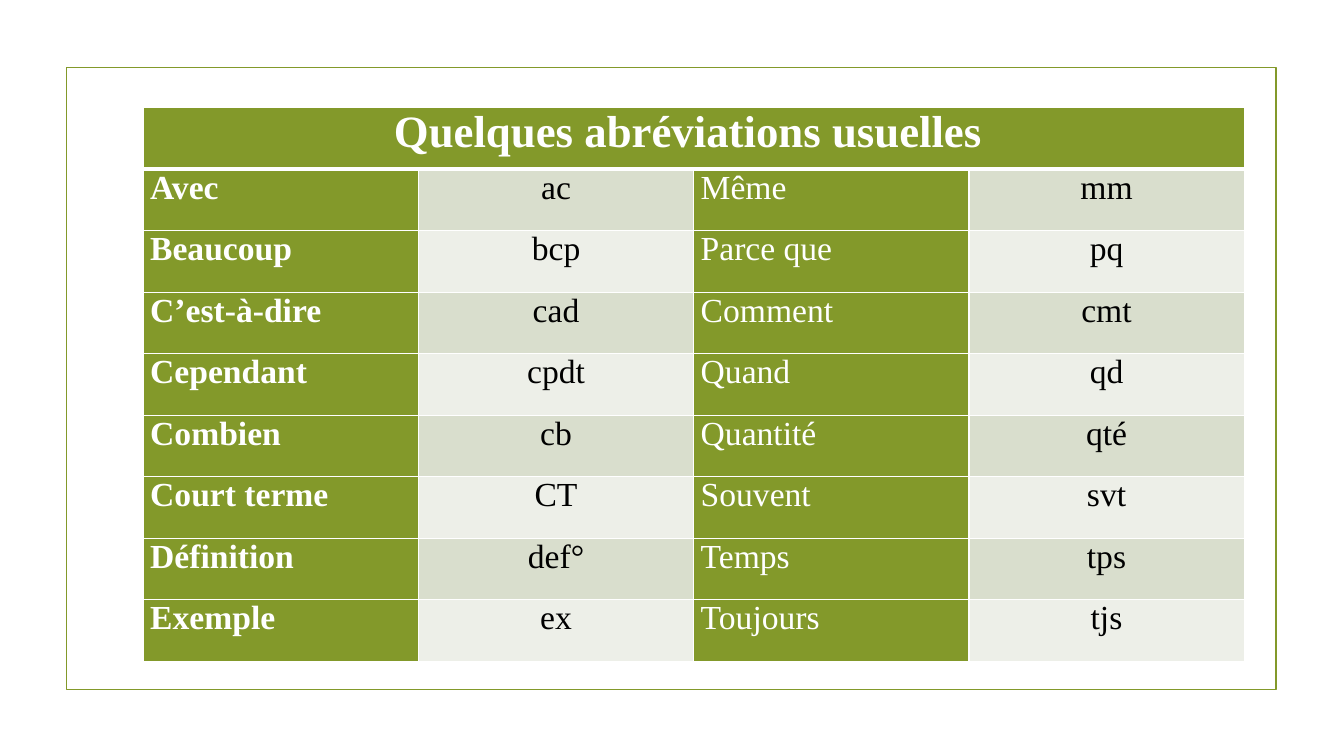
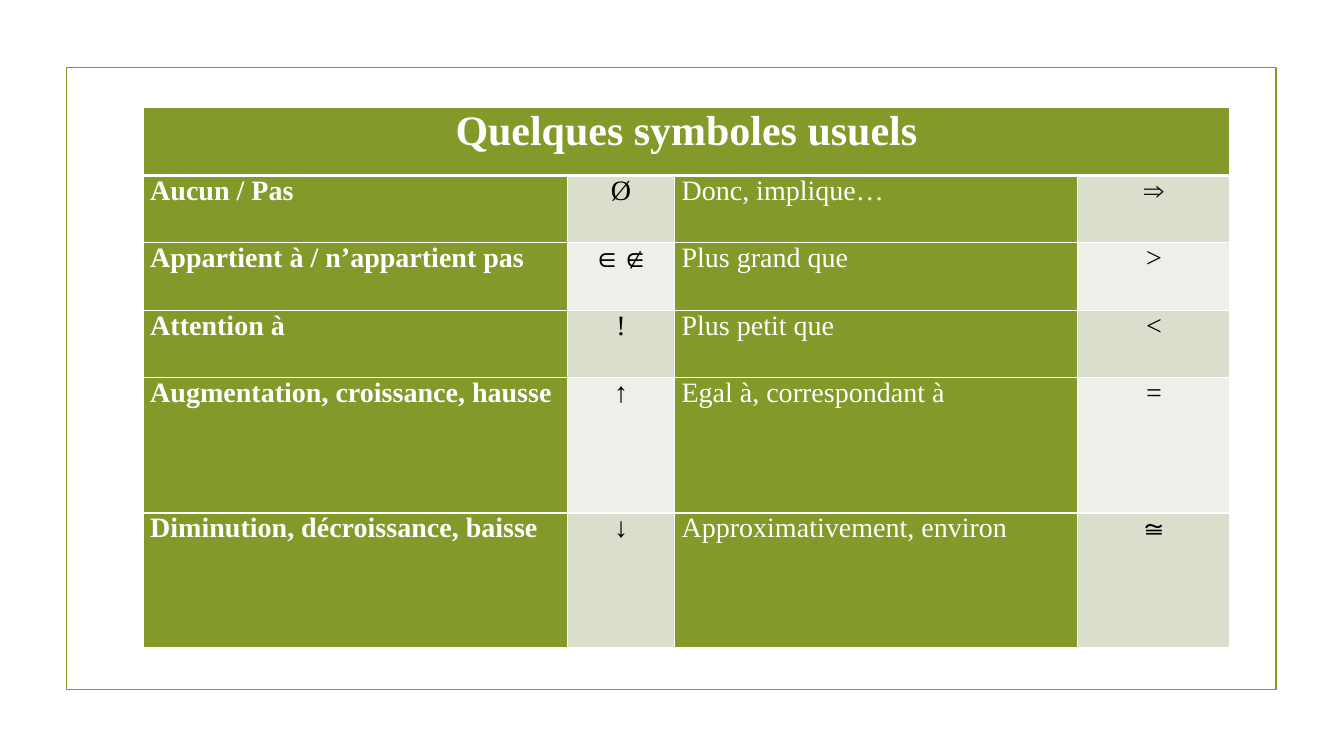
from lxml import etree
from pptx import Presentation
from pptx.dml.color import RGBColor
from pptx.enum.shapes import MSO_SHAPE
from pptx.enum.text import PP_ALIGN
from pptx.oxml.ns import qn
from pptx.util import Pt

RECT = MSO_SHAPE.RECTANGLE
CENTER = PP_ALIGN.CENTER
JUSTIFY = PP_ALIGN.JUSTIFY

SCALE = 9144
FONT = "Times New Roman"
GREEN = "83992A"
WHITE = "FFFFFF"
BLACK = "000000"
BANDS = ("EDEFE8", "D9DECD")
LEFT, TOP = 142, 107
THIN, THICK = 1, 3

INSETS = {
    "margin_left": 7 * SCALE,
    "margin_right": 7 * SCALE,
    "margin_top": 0,
    "margin_bottom": 0,
}
PLAIN = {"first_row": False, "horz_banding": False}

SHORT = [
    ("Avec", "ac", "Même", "mm"),
    ("Beaucoup ", "bcp", "Parce que ", "pq"),
    ("C’est-à-dire", "cad", "Comment", "cmt"),
    ("Cependant", "cpdt", "Quand ", "qd"),
    ("Combien", "cb", "Quantité ", "qté"),
    ("Court terme ", "CT", "Souvent ", "svt"),
    ("Définition", "def°", "Temps ", "tps"),
    ("Exemple ", "ex", "Toujours", "tjs"),
]
SIGNS = [
    ("Aucun / Pas ", "Ø", "Donc, implique…", "⇒"),
    ("Appartient à / n’appartient pas ", "∈∉", "Plus grand que ", ">"),
    ("Attention à ", "!", "Plus petit que", "<"),
    ("Augmentation, croissance, hausse", "↑", "Egal à, correspondant à", "="),
    ("Diminution, décroissance, baisse", "↓", "Approximativement, environ", "≅"),
]


def px(*sizes):
    return [size * SCALE for size in sizes]


def color(code):
    return RGBColor.from_string(code)


def apply(target, values):
    for name, value in values.items():
        setattr(target, name, value)


def paint(fill, code):
    fill.solid()
    fill.fore_color.rgb = color(code)


def add_frame(slide):
    frame = slide.shapes.add_shape(RECT, *px(66, 67, 1200, 617))
    frame.shadow.inherit = False
    frame.fill.background()
    frame.line.color.rgb = color(GREEN)
    frame.line.width = Pt(1.25)


def add_edges(cell, top, bottom):
    props = cell._tc.get_or_add_tcPr()
    widths = {"lnL": THIN, "lnR": THIN, "lnT": top, "lnB": bottom}
    for index, (side, width) in enumerate(widths.items()):
        edge = etree.Element(qn(f"a:{side}"), w=str(Pt(width)))
        solid = etree.SubElement(edge, qn("a:solidFill"))
        etree.SubElement(solid, qn("a:srgbClr"), val=WHITE)
        props.insert(index, edge)


def fill_cell(cell, text, fill, ink, align, font):
    apply(cell, INSETS)
    paint(cell.fill, fill)
    para = cell.text_frame.paragraphs[0]
    para.alignment = align
    run = para.add_run()
    run.text = text
    apply(run.font, {"name": FONT, **font})
    run.font.color.rgb = color(ink)


def add_grid(slide, title, rows, widths, heights, head, body):
    count = len(widths)
    size = px(LEFT, TOP, sum(widths), sum(heights))
    grid = slide.shapes.add_table(len(heights), count, *size).table
    apply(grid, PLAIN)
    for column, width in zip(grid.columns, px(*widths)):
        column.width = width
    for row, height in zip(grid.rows, px(*heights)):
        row.height = height

    first = grid.cell(0, 0)
    first.merge(grid.cell(0, count - 1))
    fill_cell(first, title, GREEN, WHITE, CENTER,
              {"size": Pt(head), "bold": True})
    for col in range(count):
        add_edges(grid.cell(0, col), THIN, THICK)

    for r, texts in enumerate(rows, 1):
        for c, text in enumerate(texts):
            cell = grid.cell(r, c)
            font = {"size": Pt(body), "bold": c == 0}
            if c % 2:
                look = (BANDS[r % 2], BLACK, CENTER)
            else:
                look = (GREEN, WHITE, JUSTIFY)
            fill_cell(cell, text, *look, font)
            add_edges(cell, THICK if r == 1 else THIN, THIN)


def main():
    deck = Presentation()
    apply(deck, {"slide_width": 1333 * SCALE, "slide_height": 750 * SCALE})
    tables = [
        ("Quelques abréviations usuelles ", SHORT,
         [273] * 4, [61] * 9, 32, 24),
        ("Quelques symboles usuels", SIGNS,
         [421, 106, 400, 151], [67] * 4 + [134] * 2, 30, 20),
    ]
    for table in tables:
        slide = deck.slides.add_slide(deck.slide_layouts[6])
        paint(slide.background.fill, WHITE)
        add_frame(slide)
        add_grid(slide, *table)
    deck.save("out.pptx")


if __name__ == "__main__":
    main()
